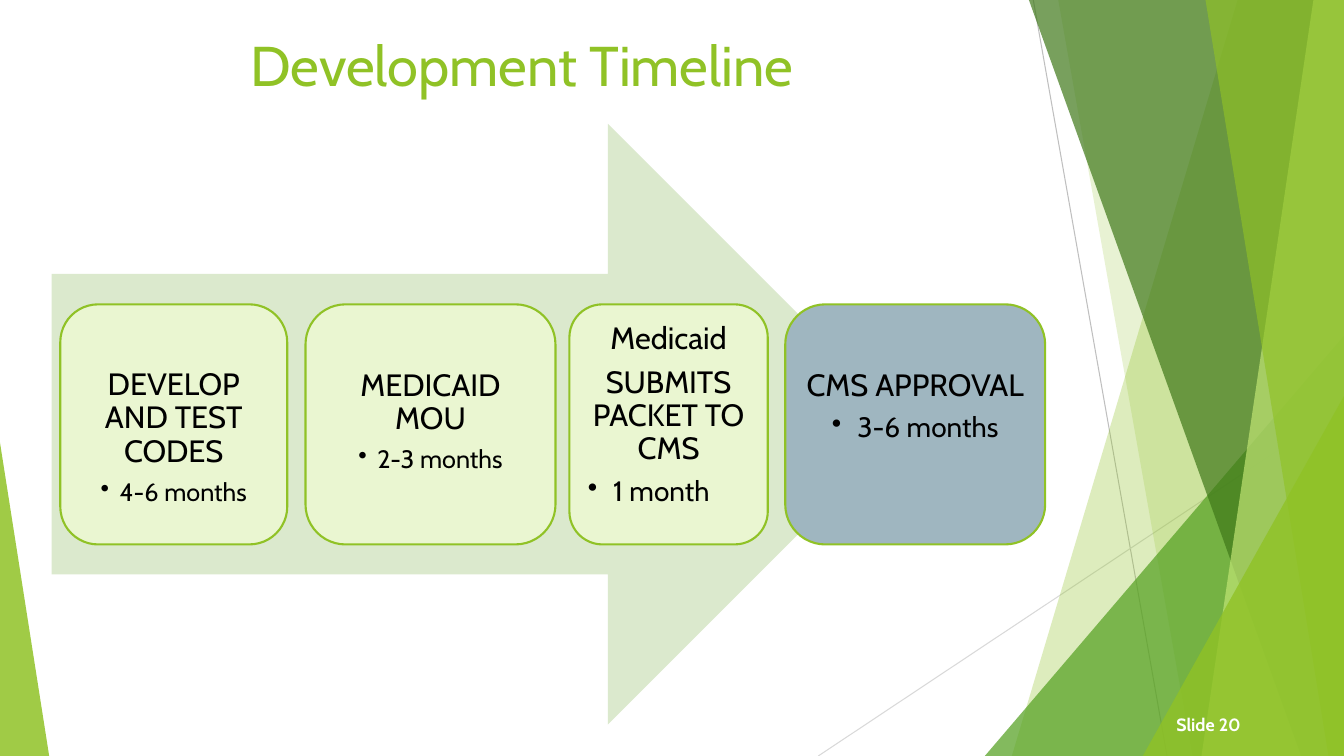
from lxml import etree
from pptx import Presentation
from pptx.dml.color import RGBColor
from pptx.enum.shapes import MSO_CONNECTOR, MSO_SHAPE
from pptx.enum.text import MSO_ANCHOR as ANCHOR, PP_ALIGN as ALIGN
from pptx.oxml.ns import qn
from pptx.util import Cm, Pt

COLORS = {
    "green": "90C226", "leaf": "54A021", "forest": "3F7819", "lime": "C0E474",
    "arrow": "DBE9CD", "step": "EAF6D1", "approval": "9FB6C0",
    "grey": "BFBFBF", "pale_grey": "D9D9D9", "black": "000000", "white": "FFFFFF",
}
FONT = "Cabin"
WIDTH, HEIGHT = 33.87, 19.05
STEP_TOP, STEP_HEIGHT = 7.67, 6.05


def rgb(name):
    return RGBColor.from_string(COLORS[name])


def paint(sp, color, alpha=100, line=None):
    sp.shadow.inherit = False
    sp.fill.solid()
    sp.fill.fore_color.rgb = rgb(color)
    if alpha < 100:
        clr = sp.fill._xPr.find(qn("a:solidFill"))[0]
        etree.SubElement(clr, qn("a:alpha"), val=str(alpha * 1000))
    if line:
        sp.line.color.rgb = rgb(line)
        sp.line.width = Pt(1.5)
    else:
        sp.line.fill.background()


def add_shape(s, kind, x, y, w, h, color, adj=None, **fmt):
    sp = s.shapes.add_shape(kind, Cm(x), Cm(y), Cm(w), Cm(h))
    if adj is not None:
        sp.adjustments[0] = adj
    paint(sp, color, **fmt)
    return sp


def add_band(s, top_x, bottom_x, color, alpha):
    fb = s.shapes.build_freeform(Cm(top_x), Cm(0))
    corners = [(WIDTH, 0), (WIDTH, HEIGHT), (bottom_x, HEIGHT)]
    fb.add_line_segments([(Cm(x), Cm(y)) for x, y in corners], close=True)
    paint(fb.convert_to_shape(), color, alpha)


def add_line(s, x1, y1, x2, y2, color):
    c = s.shapes.add_connector(MSO_CONNECTOR.STRAIGHT, Cm(x1), Cm(y1), Cm(x2), Cm(y2))
    c.line.color.rgb = rgb(color)
    c.line.width = Pt(0.75)
    etree.SubElement(c._element.spPr, qn("a:effectLst"))


def write(p, text, size, color="black", bold=False, align=ALIGN.CENTER,
          spacing=None, after=None, bullet_indent=None):
    if bullet_indent:
        p.level = 1
        pPr = p._p.get_or_add_pPr()
        pPr.set("marL", str(Cm(bullet_indent)))
        pPr.set("indent", str(-Cm(bullet_indent)))
        etree.SubElement(pPr, qn("a:buChar"), char="•")
    p.alignment = align
    p.line_spacing = spacing
    if after is not None:
        p.space_after = Pt(after)
    r = p.add_run()
    r.text = text
    r.font.name = FONT
    r.font.size = Pt(size)
    r.font.bold = bold
    r.font.color.rgb = rgb(color)


def add_label(s, x, y, w, h, text, size, **fmt):
    tf = s.shapes.add_textbox(Cm(x), Cm(y), Cm(w), Cm(h)).text_frame
    tf.word_wrap = True
    tf.vertical_anchor = ANCHOR.MIDDLE
    write(tf.paragraphs[0], text, size, **fmt)


def add_step(s, x, w, heads, duration, size, indent, color="step",
             align=ALIGN.CENTER, top=1.35):
    sp = add_shape(s, MSO_SHAPE.ROUNDED_RECTANGLE, x, STEP_TOP, w, STEP_HEIGHT,
                   color, line="green")
    tf = sp.text_frame
    tf.word_wrap = True
    tf.vertical_anchor = ANCHOR.TOP
    tf.margin_left = tf.margin_right = tf.margin_bottom = Cm(0.22)
    tf.margin_top = Cm(top)
    for i, head in enumerate(heads):
        p = tf.add_paragraph() if i else tf.paragraphs[0]
        write(p, head, 22, spacing=0.9, after=7.7)
    write(tf.add_paragraph(), duration, size, align=align, spacing=0.9,
          after=size * 0.15, bullet_indent=indent)


def add_backdrop(s):
    triangle = MSO_SHAPE.ISOSCELES_TRIANGLE
    add_line(s, 26.04, 0, 29.41, HEIGHT, "grey")
    add_line(s, WIDTH, 10.24, 20.62, HEIGHT, "pale_grey")
    add_band(s, 31.19, 25.5, "green", 30)
    add_band(s, 26.67, 30.05, "green", 20)
    add_shape(s, triangle, 24.82, 8.46, 9.05, 10.59, "leaf", adj=1, alpha=72)
    add_band(s, 25.93, 32.79, "forest", 70)
    add_band(s, 33.1, 30.28, "lime", 70)
    add_band(s, 30.38, 33.48, "green", 65)
    add_shape(s, triangle, 28.8, 9.98, 5.07, 9.07, "green", adj=1, alpha=80)
    add_shape(s, triangle, 0, 11.15, 1.24, 7.9, "green", adj=0, alpha=85)


def main():
    prs = Presentation()
    prs.slide_width, prs.slide_height = Cm(WIDTH), Cm(HEIGHT)
    s = prs.slides.add_slide(prs.slide_layouts[6])
    add_backdrop(s)
    add_label(s, 1.98, 0.52, 22.35, 2.18, "Development Timeline", 40, color="green")
    add_shape(s, MSO_SHAPE.RIGHT_ARROW, 1.3, 3.12, 21.59, 15.14, "arrow")
    add_step(s, 1.52, 5.72, ["DEVELOP AND TEST CODES"], "4-6 months", 18, 0.48)
    add_step(s, 7.7, 6.3, ["MEDICAID MOU"], "2-3 months", 18, 0.48)
    add_step(s, 14.35, 5, ["Medicaid", "SUBMITS PACKET TO CMS"], "1 month", 20, 0.64,
             align=ALIGN.LEFT, top=0.22)
    add_step(s, 19.79, 6.55, ["CMS APPROVAL"], "3-6 months", 20, 0.64, color="approval")
    add_label(s, 26.64, 17.86, 4.88, 0.79, "Slide 20", 12.7, color="white", bold=True,
              align=ALIGN.RIGHT)
    prs.save("out.pptx")


if __name__ == "__main__":
    main()
